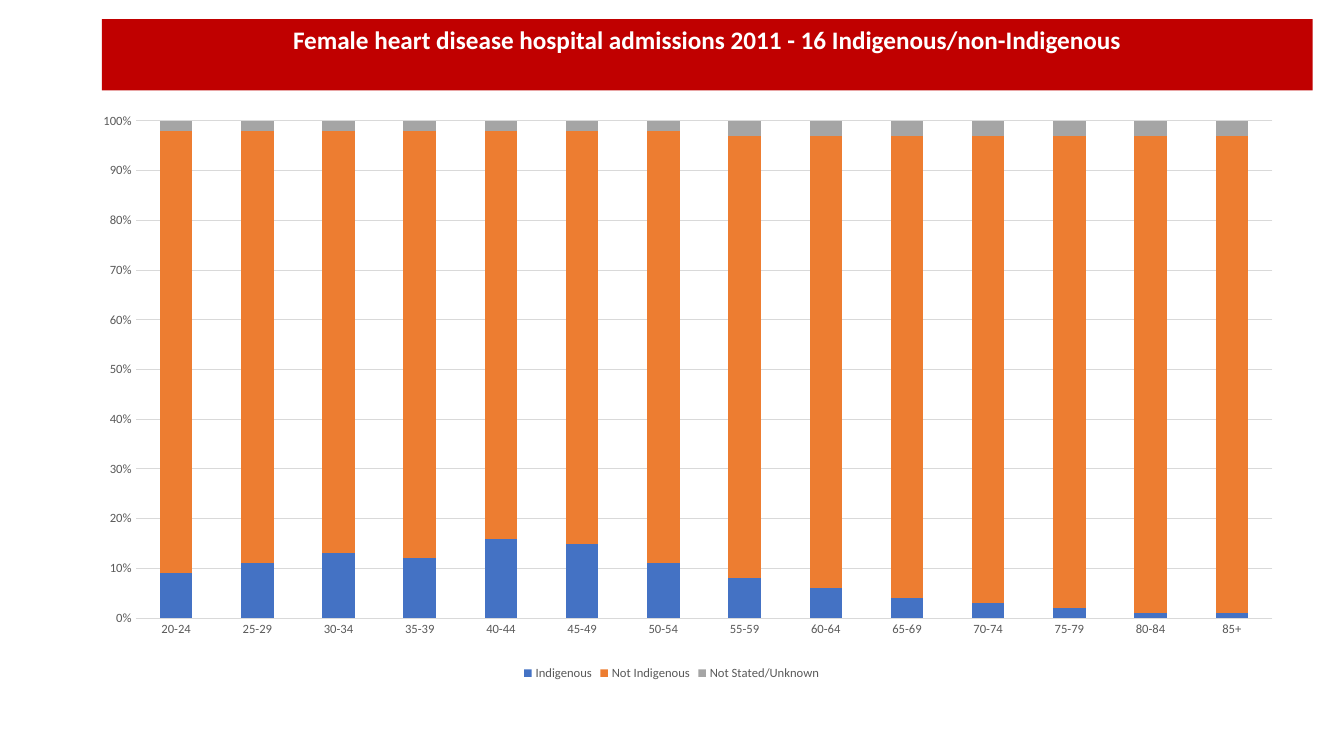
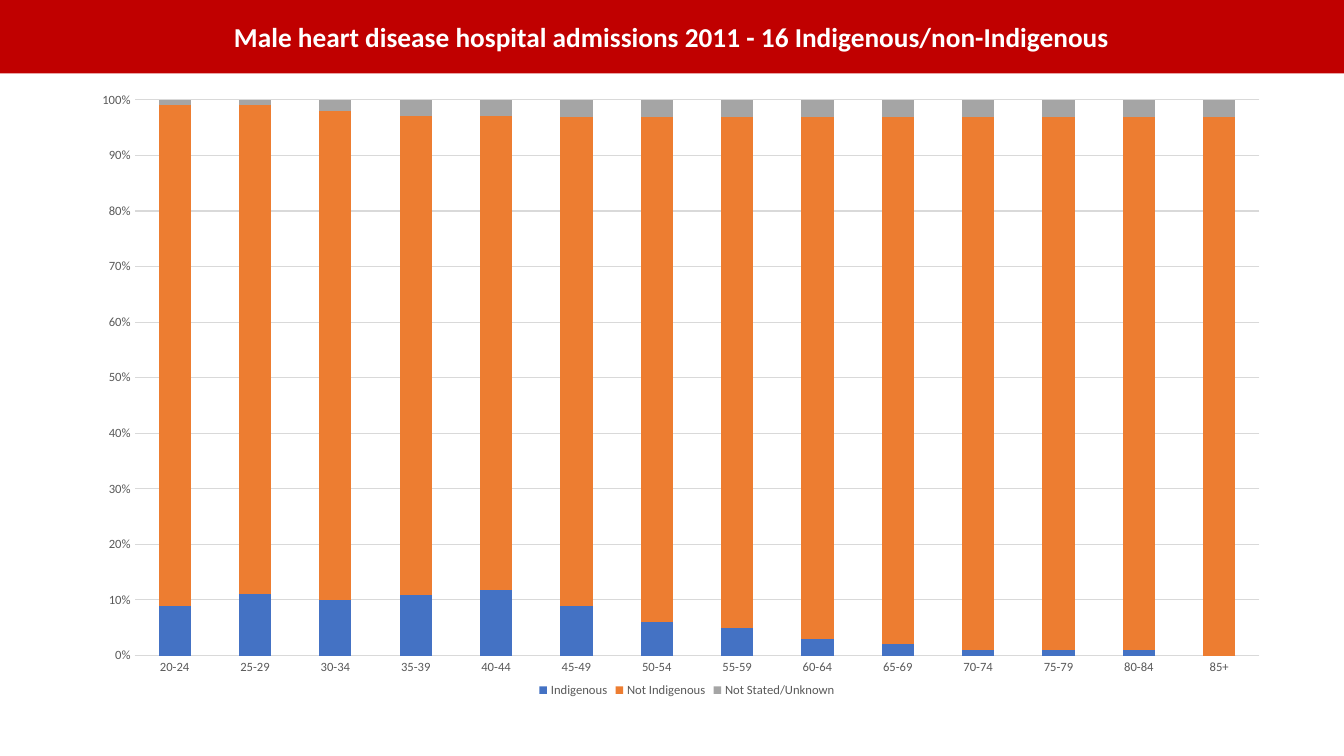
from lxml import etree
from pptx import Presentation
from pptx.chart.data import CategoryChartData as ChartData
from pptx.dml.color import RGBColor
from pptx.enum.chart import XL_CHART_TYPE as ChartType
from pptx.enum.chart import XL_LEGEND_POSITION as LegendPosition
from pptx.enum.chart import XL_TICK_MARK as TickMark
from pptx.enum.text import MSO_ANCHOR as Anchor
from pptx.enum.text import MSO_AUTO_SIZE as AutoSize
from pptx.enum.text import PP_ALIGN as Align
from pptx.oxml.ns import qn
from pptx.util import Cm, Pt

RED = RGBColor(0xC0, 0x00, 0x00)
WHITE = RGBColor(0xFF, 0xFF, 0xFF)
LABEL_GREY = RGBColor(0x59, 0x59, 0x59)
LINE_GREY = RGBColor(0xD9, 0xD9, 0xD9)
BLUE = RGBColor(0x44, 0x72, 0xC4)
ORANGE = RGBColor(0xED, 0x7D, 0x31)
GREY = RGBColor(0xA5, 0xA5, 0xA5)

AGE_GROUPS = [f"{age}-{age + 4}" for age in range(20, 85, 5)] + ["85+"]
STATUSES = [("Indigenous", BLUE), ("Not Indigenous", ORANGE), ("Not Stated/Unknown", GREY)]

ADMISSIONS = [
    {
        "title": "Female heart disease hospital admissions 2011 - 16 Indigenous/non-Indigenous",
        "band": (2.57, 0.48, 30.51, 1.8),
        "size": 18,
        "anchor": Anchor.TOP,
        "frame": (1.78, 1.78, 30.3, 15.47),
        "plot": {"x": 0.054, "y": 0.082, "w": 0.946, "h": 0.81},
        "values": [
            [9, 11, 13, 12, 16, 15, 11, 8, 6, 4, 3, 2, 1, 1],
            [89, 86, 85, 86, 82, 83, 87, 89, 91, 93, 94, 95, 96, 96],
            [2, 2, 2, 2, 2, 2, 2, 3, 3, 3, 3, 3, 3, 3],
        ],
    },
    {
        "title": "Male heart disease hospital admissions 2011 - 16 Indigenous/non-Indigenous",
        "band": (0, 0, 33.87, 1.85),
        "size": 19.5,
        "anchor": Anchor.MIDDLE,
        "frame": (2.31, 2.24, 30, 15.44),
        "plot": {"x": 0.036, "y": 0.018, "w": 0.945, "h": 0.907},
        "values": [
            [9, 11, 10, 11, 12, 9, 6, 5, 3, 2, 1, 1, 1, 0],
            [90, 88, 88, 87, 86, 88, 91, 92, 94, 95, 95, 96, 96, 96],
            [1, 1, 2, 3, 3, 3, 3, 3, 3, 3, 3, 3, 3, 3],
        ],
    },
]


def apply(target, values):
    for name, value in values.items():
        setattr(target, name, value)


class Deck:
    title_font = {"name": "Calibri", "bold": True}
    label_font = {"name": "Calibri", "size": Pt(9)}

    def __init__(self):
        self.presentation = Presentation()
        apply(self.presentation, {"slide_width": Cm(33.87), "slide_height": Cm(19.05)})
        self.slide = None

    def add_slide(self):
        layout = self.presentation.slide_layouts.get_by_name("Title Only")
        self.slide = self.presentation.slides.add_slide(layout)

    def title_band(self, text, box, size, anchor):
        title = self.slide.shapes.title
        apply(title, dict(zip(("left", "top", "width", "height"), map(Cm, box))))
        title.fill.solid()
        title.fill.fore_color.rgb = RED
        frame = title.text_frame
        apply(frame, {"text": text, "word_wrap": True, "auto_size": AutoSize.NONE,
                      "vertical_anchor": anchor})
        paragraph = frame.paragraphs[0]
        paragraph.alignment = Align.CENTER
        font = paragraph.runs[0].font
        apply(font, {**self.title_font, "size": Pt(size)})
        font.color.rgb = WHITE
        title.element.getparent().append(title.element)

    def share_chart(self, values, box, plot_area):
        data = ChartData(number_format="###0")
        data.categories = AGE_GROUPS
        for (name, _), shares in zip(STATUSES, values):
            data.add_series(name, shares)
        chart = self.slide.shapes.add_chart(
            ChartType.COLUMN_STACKED_100, *map(Cm, box), data).chart
        apply(chart, {"has_title": False, "has_legend": True})
        apply(chart.font, self.label_font)
        chart.font.color.rgb = LABEL_GREY
        apply(chart.legend, {"position": LegendPosition.BOTTOM, "include_in_layout": False})
        plot = chart.plots[0]
        apply(plot, {"gap_width": 150, "overlap": 100, "vary_by_categories": False})
        for series, (_, color) in zip(plot.series, STATUSES):
            series.format.fill.solid()
            series.format.fill.fore_color.rgb = color
        self.style_axes(chart)
        self.place_plot(chart, plot_area)

    def style_axes(self, chart):
        for axis in (chart.category_axis, chart.value_axis):
            apply(axis, {"major_tick_mark": TickMark.NONE, "minor_tick_mark": TickMark.NONE})
        value_axis = chart.value_axis
        value_axis.has_major_gridlines = True
        apply(value_axis.tick_labels, {"number_format": "0%", "number_format_is_linked": False})
        value_axis.format.line.fill.background()
        for line in (chart.category_axis.format.line, value_axis.major_gridlines.format.line):
            line.color.rgb = LINE_GREY
            line.width = Pt(0.75)

    def place_plot(self, chart, plot_area):
        area = chart.element.find(".//" + qn("c:plotArea"))
        for old_layout in area.findall(qn("c:layout")):
            area.remove(old_layout)
        layout = etree.Element(qn("c:layout"))
        area.insert(0, layout)
        manual = etree.SubElement(layout, qn("c:manualLayout"))
        settings = {"layoutTarget": "inner", "xMode": "edge", "yMode": "edge", **plot_area}
        for name, value in settings.items():
            etree.SubElement(manual, qn(f"c:{name}"), val=str(value))


def main():
    deck = Deck()
    for group in ADMISSIONS:
        deck.add_slide()
        deck.share_chart(group["values"], group["frame"], group["plot"])
        deck.title_band(group["title"], group["band"], group["size"], group["anchor"])
    deck.presentation.save("out.pptx")


if __name__ == "__main__":
    main()
